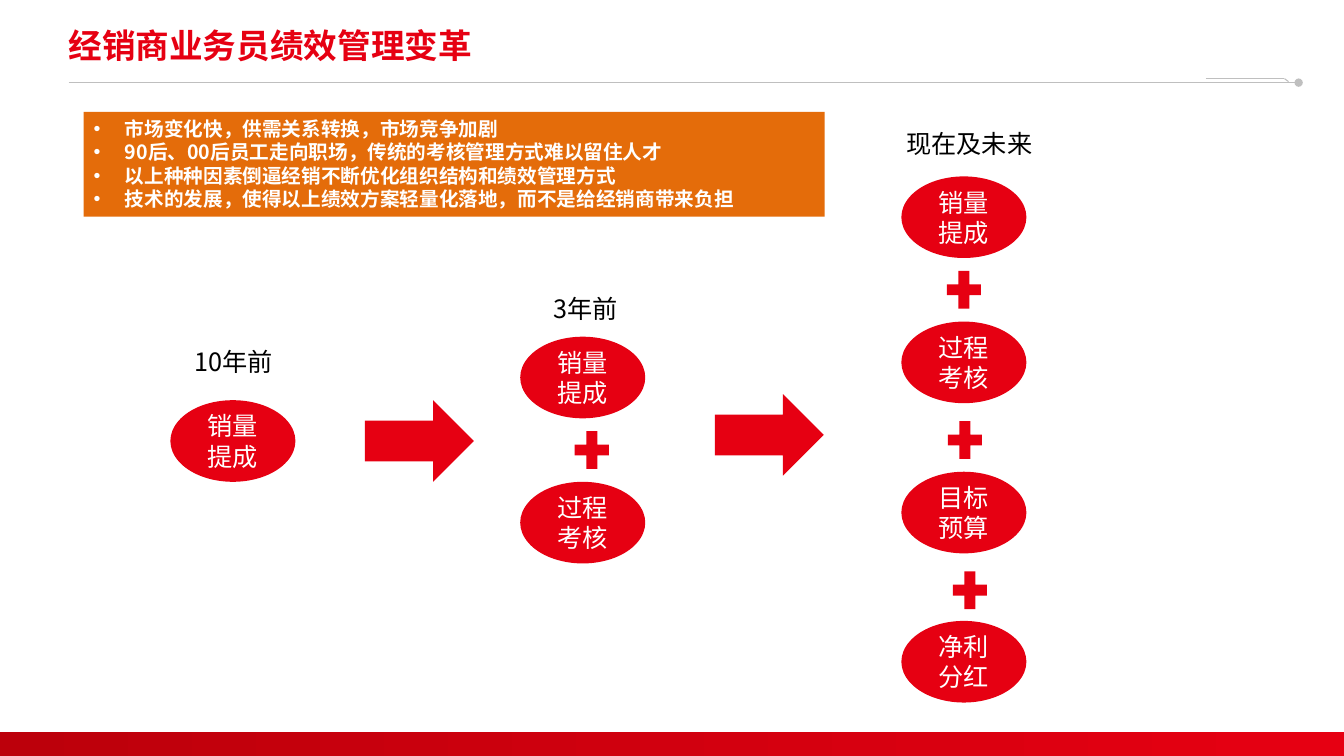
import pptx
import pptx.util
import pptx.dml.color
import pptx.enum.shapes
import pptx.enum.text
import pptx.oxml.ns
from lxml import etree

Inches = pptx.util.Inches
Pt = pptx.util.Pt
RGB = pptx.dml.color.RGBColor.from_string
MSO_SHAPE = pptx.enum.shapes.MSO_SHAPE
ANCHOR = pptx.enum.text.MSO_ANCHOR
ALIGN = pptx.enum.text.PP_ALIGN
qn = pptx.oxml.ns.qn

COLORS = {"red": "E60012", "dark_red": "BC000B", "orange": "E46C0A",
          "gray": "BFBFBF", "white": "FFFFFF", "black": "000000"}
CJK = "Noto Sans CJK SC"

deck = pptx.Presentation()
deck.slide_width, deck.slide_height = Inches(13.33), Inches(7.5)
slide = deck.slides.add_slide(deck.slide_layouts[6])
shapes = slide.shapes


def add_red_shape(kind, left, top, width, height):
    shape = shapes.add_shape(kind, Inches(left), Inches(top), Inches(width), Inches(height))
    shape.shadow.inherit = False
    shape.fill.solid()
    shape.fill.fore_color.rgb = RGB(COLORS["red"])
    shape.line.fill.background()
    return shape


def style(paragraph, size, color, bold=False, latin=CJK):
    """Set the Latin and East Asian fonts of a paragraph."""
    font = paragraph.font
    font.size, font.bold, font.name = Pt(size), bold, latin
    font.color.rgb = RGB(COLORS[color])
    properties = paragraph._p.pPr.find(qn("a:defRPr"))
    etree.SubElement(properties, qn("a:ea"), typeface=CJK)


# Footer band and header rule
footer = add_red_shape(MSO_SHAPE.RECTANGLE, 0, 7.26, 13.33, 0.24)
footer.fill.gradient()
footer.fill.gradient_angle = 0
for stop, color, position in zip(footer.fill.gradient_stops, ("dark_red", "red"), (0, 1)):
    stop.color.rgb = RGB(COLORS[color])
    stop.position = position

for x1, y1, x2, y2, end in [(0.68, 0.82, 12.88, 0.82, "oval"),
                            (11.96, 0.78, 12.74, 0.78, None),
                            (12.74, 0.78, 12.78, 0.81, None)]:
    rule = shapes.add_connector(pptx.enum.shapes.MSO_CONNECTOR.STRAIGHT,
                                Inches(x1), Inches(y1), Inches(x2), Inches(y2))
    rule.line.color.rgb = RGB(COLORS["gray"])
    rule.line.width = Pt(0.75)
    if end:
        etree.SubElement(rule.line._get_or_add_ln(), qn("a:tailEnd"), type=end)
    etree.SubElement(rule._element.spPr, qn("a:effectLst"))

# Title
title = shapes.add_textbox(Inches(0.68), Inches(0.22), Inches(10.08), Inches(0.5)).text_frame
title.word_wrap = True
title.vertical_anchor = ANCHOR.MIDDLE
title.margin_left = 0
title.text = "经销商业务员绩效管理变革"
title.paragraphs[0].line_spacing = 0.9
style(title.paragraphs[0], 24, "red", bold=True, latin="Arial")

# Stages: heading with its left, top and width, then the ovals and the pluses
stages = [
    ("10年前", 1.83, 3.39, 1.1, 1.69, [("销量提成", 3.97)], []),
    ("3年前", 5.39, 2.86, 1.1, 5.16, [("销量提成", 3.34), ("过程考核", 4.78)], [(5.64, 4.21)]),
    ("现在及未来", 8.89, 1.22, 1.47, 8.94,
     [("销量提成", 1.75), ("过程考核", 3.19), ("目标预算", 4.68), ("净利分红", 6.16)],
     [(9.33, 2.62), (9.34, 4.11), (9.39, 5.6)]),
]
for period, left, top, width, oval_left, measures, pluses in stages:
    heading = shapes.add_textbox(Inches(left), Inches(top), Inches(width), Inches(0.4)).text_frame
    heading.word_wrap = True
    heading.text = period
    style(heading.paragraphs[0], 18, "black")
    for measure, oval_top in measures:
        oval = add_red_shape(MSO_SHAPE.OVAL, oval_left, oval_top, 1.24, 0.81).text_frame
        oval.vertical_anchor = ANCHOR.MIDDLE
        oval.text = measure
        oval.paragraphs[0].alignment = ALIGN.CENTER
        style(oval.paragraphs[0], 18, "white")
    for plus_left, plus_top in pluses:
        add_red_shape(MSO_SHAPE.MATH_PLUS, plus_left, plus_top, 0.46, 0.51)

for left, top in [(3.62, 3.97), (7.09, 3.91)]:
    add_red_shape(MSO_SHAPE.RIGHT_ARROW, left, top, 1.08, 0.81)

# Reasons for the change
reasons_box = shapes.add_textbox(Inches(0.83), Inches(1.11), Inches(7.35), Inches(1.04))
reasons_box.fill.solid()
reasons_box.fill.fore_color.rgb = RGB(COLORS["orange"])
reasons = reasons_box.text_frame
reasons.word_wrap = True
reasons.text = "\n".join([
    "市场变化快，供需关系转换，市场竞争加剧",
    "90后、00后员工走向职场，传统的考核管理方式难以留住人才",
    "以上种种因素倒逼经销不断优化组织结构和绩效管理方式",
    "技术的发展，使得以上绩效方案轻量化落地，而不是给经销商带来负担",
])
for reason in reasons.paragraphs:
    layout = reason._p.get_or_add_pPr()
    layout.set("marL", str(Inches(0.31)))
    layout.set("indent", str(-Inches(0.31)))
    etree.SubElement(layout, qn("a:buFont"), typeface="Arial")
    etree.SubElement(layout, qn("a:buChar"), char="•")
    style(reason, 14, "white", bold=True)

deck.save("out.pptx")
